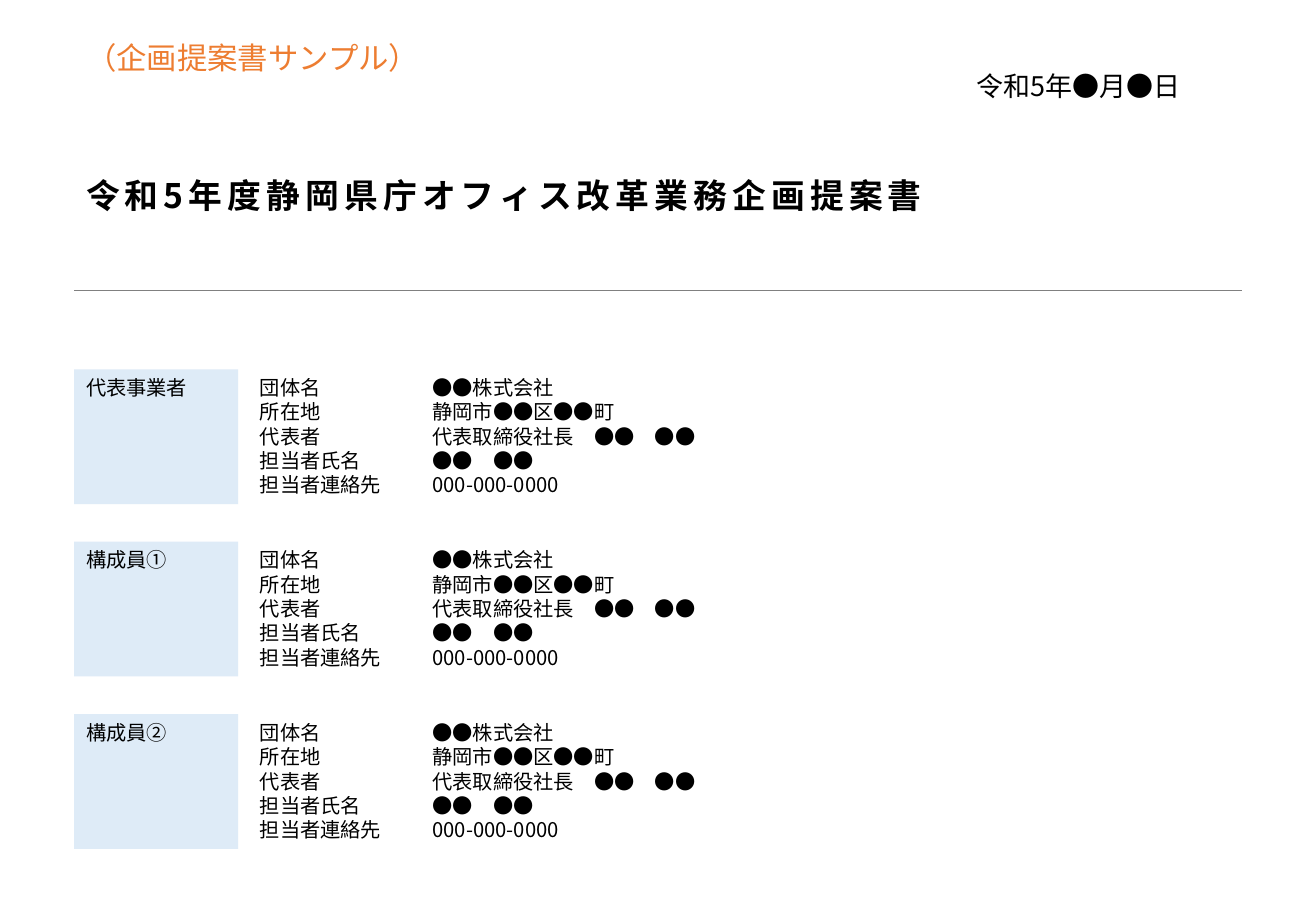
from lxml import etree
from pptx import Presentation
from pptx.dml.color import RGBColor
from pptx.enum.shapes import MSO_CONNECTOR, MSO_SHAPE
from pptx.enum.text import MSO_ANCHOR, PP_ALIGN
from pptx.oxml.ns import qn
from pptx.util import Pt

PX = 9144
RECT = MSO_SHAPE.RECTANGLE
LINE = MSO_CONNECTOR.STRAIGHT
TOP = MSO_ANCHOR.TOP
LEFT = PP_ALIGN.LEFT
FONT = "Noto Sans CJK JP"
COLORS = {"ink": "000000", "note": "ED7D31", "rule": "808080", "label": "DEEBF7"}

TITLE = "令和5年度静岡県庁オフィス改革業務企画提案書"
DATE = "令和5年●月●日"
NOTE = "（企画提案書サンプル）"
PARTIES = ["代表事業者", "構成員①", "構成員②"]
FIELDS = [
    ("団体名", "●●株式会社"),
    ("所在地", "静岡市●●区●●町"),
    ("代表者", "代表取締役社長　●●　●●"),
    ("担当者氏名", "●●　●●"),
    ("担当者連絡先", "000-000-0000"),
]


def emu(*sizes):
    return [size * PX for size in sizes]


def color(name):
    return RGBColor.from_string(COLORS[name])


def write(frame, lines, size, tone="ink", bold=False, space=0, tab=0, wrap=True):
    frame.word_wrap = wrap
    frame.vertical_anchor = TOP
    frame.text = "\n".join(lines)
    for para in frame.paragraphs:
        para.alignment = LEFT
        if tab:
            tabs = etree.SubElement(para._p.get_or_add_pPr(), qn("a:tabLst"))
            etree.SubElement(tabs, qn("a:tab"), pos=str(tab * PX), algn="l")
        font = para.font
        font.size = Pt(size)
        font.bold = bold
        font.color.rgb = color(tone)
        font.name = FONT
        etree.SubElement(font._rPr, qn("a:ea"), typeface=FONT)
        if space:
            font._rPr.set("spc", str(space * 100))


def add_text(slide, box, lines, size, **style):
    write(slide.shapes.add_textbox(*emu(*box)).text_frame, lines, size, **style)


def add_head(slide, x, y, w):
    add_text(slide, (x, y, 331, 40), [NOTE], 18, tone="note")
    add_text(slide, (x + 733, y + 25, 236, 37), [DATE], 16)
    add_text(slide, (x, y + 112, 709, 44), [TITLE], 20, bold=True, space=3)
    rule = slide.shapes.add_connector(LINE, *emu(x, y + 212, x + w, y + 212))
    rule.line.color.rgb = color("rule")
    rule.line.width = Pt(0.5)
    etree.SubElement(rule._element.spPr, qn("a:effectLst"))


def add_party(slide, x, y, h, name):
    label = slide.shapes.add_shape(RECT, *emu(x, y, 135, h))
    label.shadow.inherit = False
    label.fill.solid()
    label.fill.fore_color.rgb = color("label")
    label.line.fill.background()
    write(label.text_frame, [name], 12, wrap=False)
    rows = ["\t".join(field) for field in FIELDS]
    add_text(slide, (x + 143, y, 497, h), rows, 12, tab=142)


def main():
    deck = Presentation()
    deck.slide_width, deck.slide_height = emu(1083, 750)
    slide = deck.slides.add_slide(deck.slide_layouts[6])
    add_head(slide, 61, 27, 961)
    for row, name in enumerate(PARTIES):
        add_party(slide, 61, 304 + row * 142, 111, name)
    deck.save("out.pptx")


if __name__ == "__main__":
    main()
